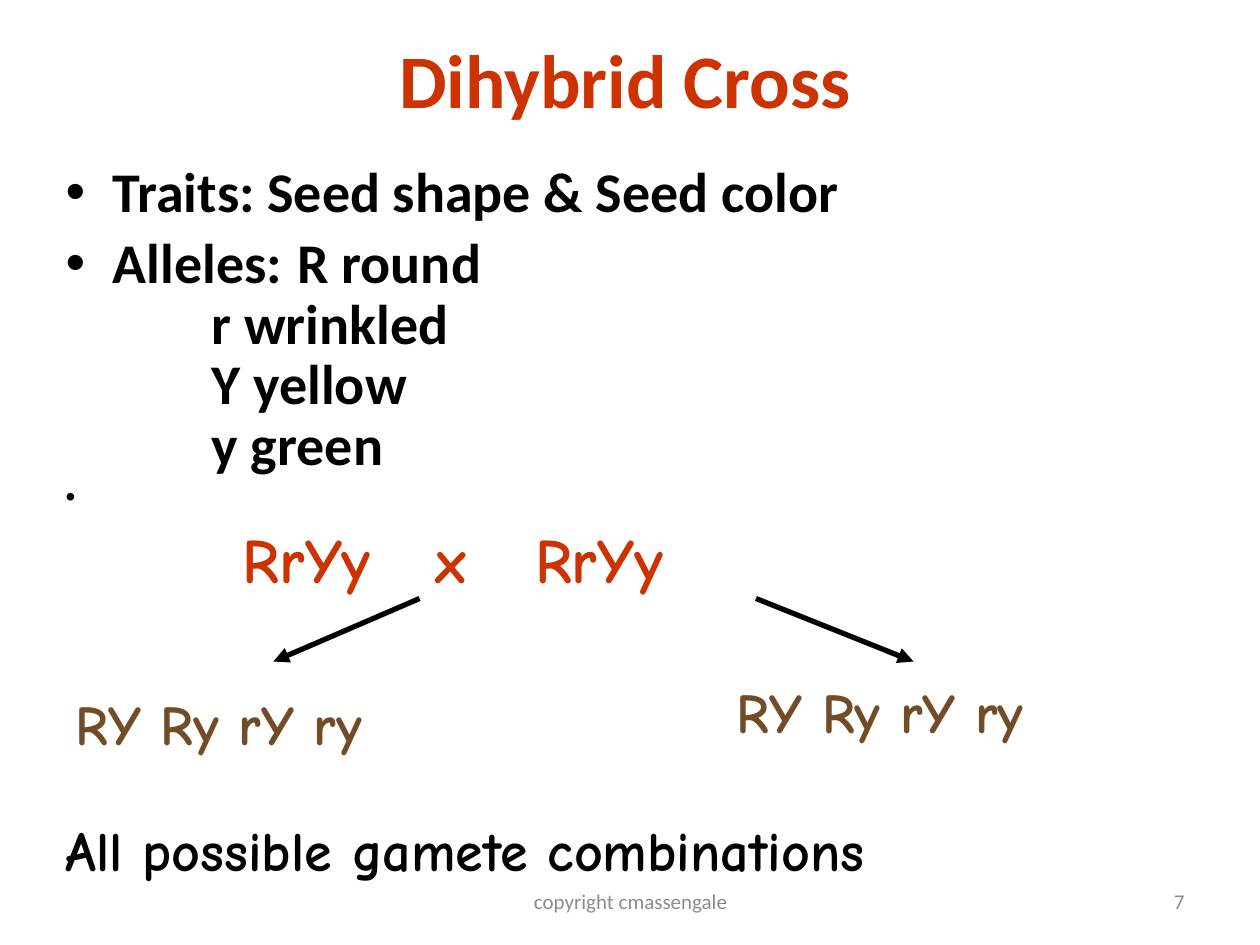
import dataclasses

import lxml.etree
import pptx
import pptx.dml.color
import pptx.enum.shapes
import pptx.enum.text
import pptx.oxml.ns
import pptx.util

Inches = pptx.util.Inches
Align = pptx.enum.text.PP_ALIGN
Anchor = pptx.enum.text.MSO_ANCHOR


@dataclasses.dataclass(frozen=True)
class Theme:
    body_font: str = "Calibri"
    hand_font: str = "Comic Neue"
    red: str = "CC3300"
    brown: str = "724C26"
    black: str = "000000"
    gray: str = "8C8C8C"
    white: str = "FFFFFF"
    title_size: float = 43.2
    cross_size: float = 36
    body_size: float = 32
    small_size: float = 16
    footer_size: float = 12


def rgb(value):
    return pptx.dml.color.RGBColor.from_string(value)


def add_element(parent, tag, **attributes):
    return lxml.etree.SubElement(parent, pptx.oxml.ns.qn(tag), attributes)


def place(shape, box):
    shape.left, shape.top, shape.width, shape.height = map(Inches, box)


class SlideBuilder:
    def __init__(self, slide, theme):
        self.slide = slide
        self.theme = theme

    def style(self, paragraph, font, size, color, bold=True):
        paragraph.font.name = font
        paragraph.font.size = pptx.util.Pt(size)
        paragraph.font.color.rgb = rgb(color)
        paragraph.font.bold = bold

    def add_tabs(self, paragraph, positions):
        tab_list = add_element(paragraph._p.get_or_add_pPr(), "a:tabLst")
        for position in positions:
            add_element(tab_list, "a:tab", pos=str(Inches(position)), algn="l")

    def title(self, text, box):
        shape = self.slide.shapes.title
        place(shape, box)
        frame = shape.text_frame
        frame.text = text
        frame.auto_size = pptx.enum.text.MSO_AUTO_SIZE.NONE
        frame.vertical_anchor = Anchor.MIDDLE
        paragraph = frame.paragraphs[0]
        paragraph.alignment = Align.CENTER
        self.style(paragraph, self.theme.body_font, self.theme.title_size, self.theme.red)

    def body(self, lines, box, indent, tab):
        shape = self.slide.placeholders[1]
        place(shape, box)
        frame = shape.text_frame
        frame.auto_size = pptx.enum.text.MSO_AUTO_SIZE.NONE
        frame.text = "\n".join(text for text, _, _ in lines)
        for paragraph, (_, bulleted, size) in zip(frame.paragraphs, lines):
            paragraph.line_spacing = 0.9
            if bulleted:
                self.add_tabs(paragraph, [tab])
            else:
                properties = paragraph._p.get_or_add_pPr()
                properties.set("marL", str(Inches(indent)))
                properties.set("indent", "0")
                add_element(properties, "a:buNone")
                paragraph.space_before = pptx.util.Pt(0)
            self.style(paragraph, self.theme.body_font, size, self.theme.black)

    def text(self, text, box, font, size, color, bold=True, align=Align.LEFT,
             anchor=Anchor.TOP, tabs=(), fill=None):
        shape = self.slide.shapes.add_textbox(*map(Inches, box))
        if fill:
            shape.fill.solid()
            shape.fill.fore_color.rgb = rgb(fill)
        frame = shape.text_frame
        frame.word_wrap = True
        frame.vertical_anchor = anchor
        frame.text = text
        paragraph = frame.paragraphs[0]
        paragraph.alignment = align
        if tabs:
            self.add_tabs(paragraph, tabs)
        self.style(paragraph, font, size, color, bold)

    def handwriting(self, text, box, size, color, **options):
        self.text(text, box, self.theme.hand_font, size, color, **options)

    def footer(self, text, box, align):
        self.text(text, box, self.theme.body_font, self.theme.footer_size,
                  self.theme.gray, bold=False, align=align, anchor=Anchor.MIDDLE)

    def arrow(self, start, end):
        connector = self.slide.shapes.add_connector(
            pptx.enum.shapes.MSO_CONNECTOR.STRAIGHT, *map(Inches, start + end))
        connector.line.color.rgb = rgb(self.theme.black)
        connector.line.width = pptx.util.Pt(3)
        add_element(connector.line._get_or_add_ln(), "a:tailEnd", type="triangle")
        add_element(connector._element.spPr, "a:effectLst")


def main():
    theme = Theme()
    presentation = pptx.Presentation()
    presentation.slide_width = Inches(10)
    presentation.slide_height = Inches(7.5)
    slide = presentation.slides.add_slide(presentation.slide_layouts[1])
    builder = SlideBuilder(slide, theme)

    builder.title("Dihybrid Cross", (1.17, 0.33, 7.58, 0.58))
    builder.body([
        ("Traits: Seed shape & Seed color", True, theme.body_size),
        ("Alleles:\tR round", True, theme.body_size),
        ("r wrinkled", False, theme.body_size),
        ("Y yellow", False, theme.body_size),
        ("y green", False, theme.body_size),
        ("\t", True, theme.small_size),
    ], (0.42, 1.25, 9.08, 2.92), indent=1.16, tab=1.84)

    builder.handwriting("RrYy\tx\tRrYy", (1.83, 4.08, 5.5, 0.7),
                        theme.cross_size, theme.red, tabs=(1.53, 2.32))
    for left, top in ((0.5, 5.42), (5.75, 5.33)):
        builder.handwriting("RY Ry rY ry", (left, top, 3.58, 0.63),
                            theme.body_size, theme.brown, fill=theme.white)
    for start_x, end_x in ((3.33, 2.17), (6, 7.25)):
        builder.arrow((start_x, 4.75), (end_x, 5.25))
    builder.handwriting("All possible gamete combinations", (0.42, 6.42, 8.92, 0.63),
                        theme.body_size, theme.black)

    builder.footer("copyright cmassengale", (3.42, 6.95, 3.17, 0.4), Align.CENTER)
    builder.footer("7", (7.17, 6.95, 2.33, 0.4), Align.RIGHT)
    presentation.save("out.pptx")


if __name__ == "__main__":
    main()
